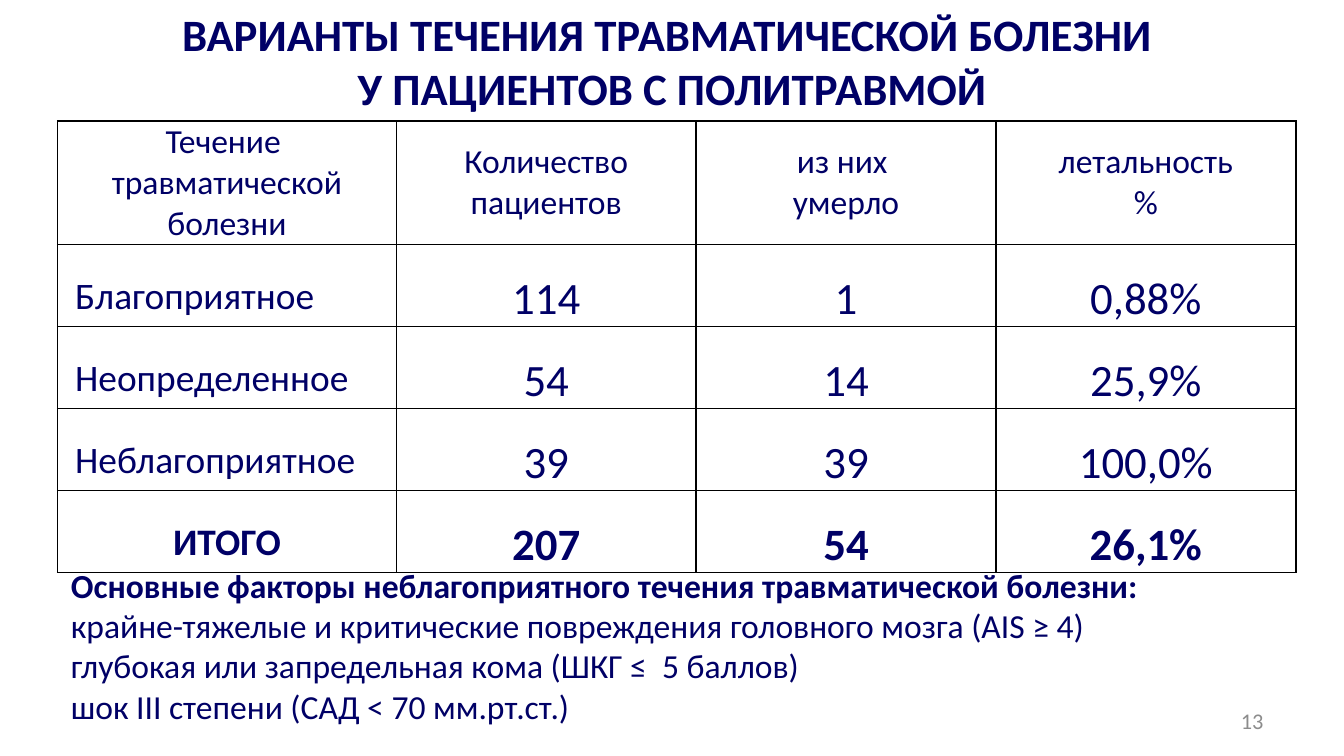
from lxml.etree import SubElement
from pptx import Presentation
from pptx.dml.color import RGBColor
from pptx.enum.text import MSO_ANCHOR as Anchor, MSO_AUTO_SIZE as AutoSize, PP_ALIGN as Align
from pptx.oxml.ns import qn
from pptx.util import Cm, Pt

NAVY, GREY, WHITE, BLACK = "000066", "8C8C8C", "FFFFFF", "000000"

TITLE = "ВАРИАНТЫ ТЕЧЕНИЯ ТРАВМАТИЧЕСКОЙ БОЛЕЗНИ \vУ ПАЦИЕНТОВ С ПОЛИТРАВМОЙ"
ROWS = [
    ["Течение \nтравматической болезни", "Количество пациентов", "из них \nумерло", "летальность\n%"],
    ["Благоприятное", "114", "1", "0,88%"],
    ["Неопределенное", "54", "14", "25,9%"],
    ["Неблагоприятное", "39", "39", "100,0%"],
    ["ИТОГО", "207", "54", "26,1%"],
]
FACTORS = [
    "Основные факторы неблагоприятного течения травматической болезни:",
    "крайне-тяжелые и критические повреждения головного мозга (AIS ≥ 4)",
    "глубокая или запредельная кома (ШКГ ≤  5 баллов)",
    "шок III степени (САД < 70 мм.рт.ст.)",
]


def color(value):
    return RGBColor.from_string(value)


def format_paragraph(paragraph, size, bold=False, align=Align.LEFT, ink=NAVY):
    paragraph.alignment = align
    font = paragraph.font
    font.name, font.size, font.bold = "Calibri", Pt(size), bold
    font.color.rgb = color(ink)


def add_borders(cell):
    properties = cell._tc.get_or_add_tcPr()
    for side in ("a:lnL", "a:lnR", "a:lnT", "a:lnB"):
        line = SubElement(properties, qn(side), w=str(Pt(1)))
        fill = SubElement(line, qn("a:solidFill"))
        SubElement(fill, qn("a:srgbClr"), val=BLACK)


def place_title(slide, left, top, width, height):
    title = slide.shapes.title
    title.left, title.top, title.width, title.height = left, top, width, height
    frame = title.text_frame
    frame.text = TITLE
    frame.word_wrap = True
    frame.auto_size = AutoSize.NONE
    frame.vertical_anchor = Anchor.MIDDLE
    frame.margin_left = frame.margin_right = frame.margin_top = frame.margin_bottom = Cm(0.1)
    format_paragraph(frame.paragraphs[0], 24, True, Align.CENTER)


def fill_cell(cell, text, row, column):
    """Style a cell by its place: header row, label column, total row."""
    header, label, total = row == 0, column == 0, row == len(ROWS) - 1
    left_aligned = label and not header and not total
    cell.text = text
    cell.vertical_anchor = Anchor.MIDDLE
    cell.margin_left = Cm(0.33 if left_aligned else 0.18)
    cell.margin_right = Cm(0.18)
    cell.margin_top = cell.margin_bottom = 0
    size = 18 if header else 20 if label else 24
    for paragraph in cell.text_frame.paragraphs:
        format_paragraph(paragraph, size, total, Align.LEFT if left_aligned else Align.CENTER)
        if not header:
            paragraph.line_spacing = 1.5
    add_borders(cell)
    cell.fill.solid()
    cell.fill.fore_color.rgb = color(WHITE)


def place_table(slide, left, top, width, height):
    label_width, header_height = Cm(6.4), Cm(2.32)
    frame = slide.shapes.add_table(len(ROWS), len(ROWS[0]), left, top, width, height)
    table = frame.table
    table.first_row = table.horz_banding = False
    for index, column in enumerate(table.columns):
        column.width = (width - label_width) // 3 if index else label_width
    for index, row in enumerate(table.rows):
        row.height = (height - header_height) // 4 if index else header_height
    for row, texts in enumerate(ROWS):
        for column, text in enumerate(texts):
            fill_cell(table.cell(row, column), text, row, column)


def place_factors(slide, left, top, width, height):
    frame = slide.shapes.add_textbox(left, top, width, height).text_frame
    frame.word_wrap = True
    frame.auto_size = AutoSize.SHAPE_TO_FIT_TEXT
    frame.text = "\n".join(FACTORS)
    for index, paragraph in enumerate(frame.paragraphs):
        format_paragraph(paragraph, 18, bold=index == 0)


def place_page_number(slide, left, top, width, height):
    frame = slide.shapes.add_textbox(left, top, width, height).text_frame
    frame.word_wrap = True
    frame.vertical_anchor = Anchor.MIDDLE
    frame.text = "13"
    format_paragraph(frame.paragraphs[0], 12, align=Align.RIGHT, ink=GREY)


def main():
    presentation = Presentation()
    presentation.slide_width, presentation.slide_height = Cm(25.4), Cm(14.28)
    slide = presentation.slides.add_slide(presentation.slide_layouts[5])
    place_table(slide, Cm(1.09), Cm(2.29), Cm(23.4), Cm(8.52))
    place_title(slide, Cm(1.27), Cm(-0.05), Cm(22.86), Cm(2.39))
    place_factors(slide, Cm(1.09), Cm(10.54), Cm(23.6), Cm(3.33))
    place_page_number(slide, Cm(18.21), Cm(13.23), Cm(5.92), Cm(0.76))
    presentation.save("out.pptx")


if __name__ == "__main__":
    main()
